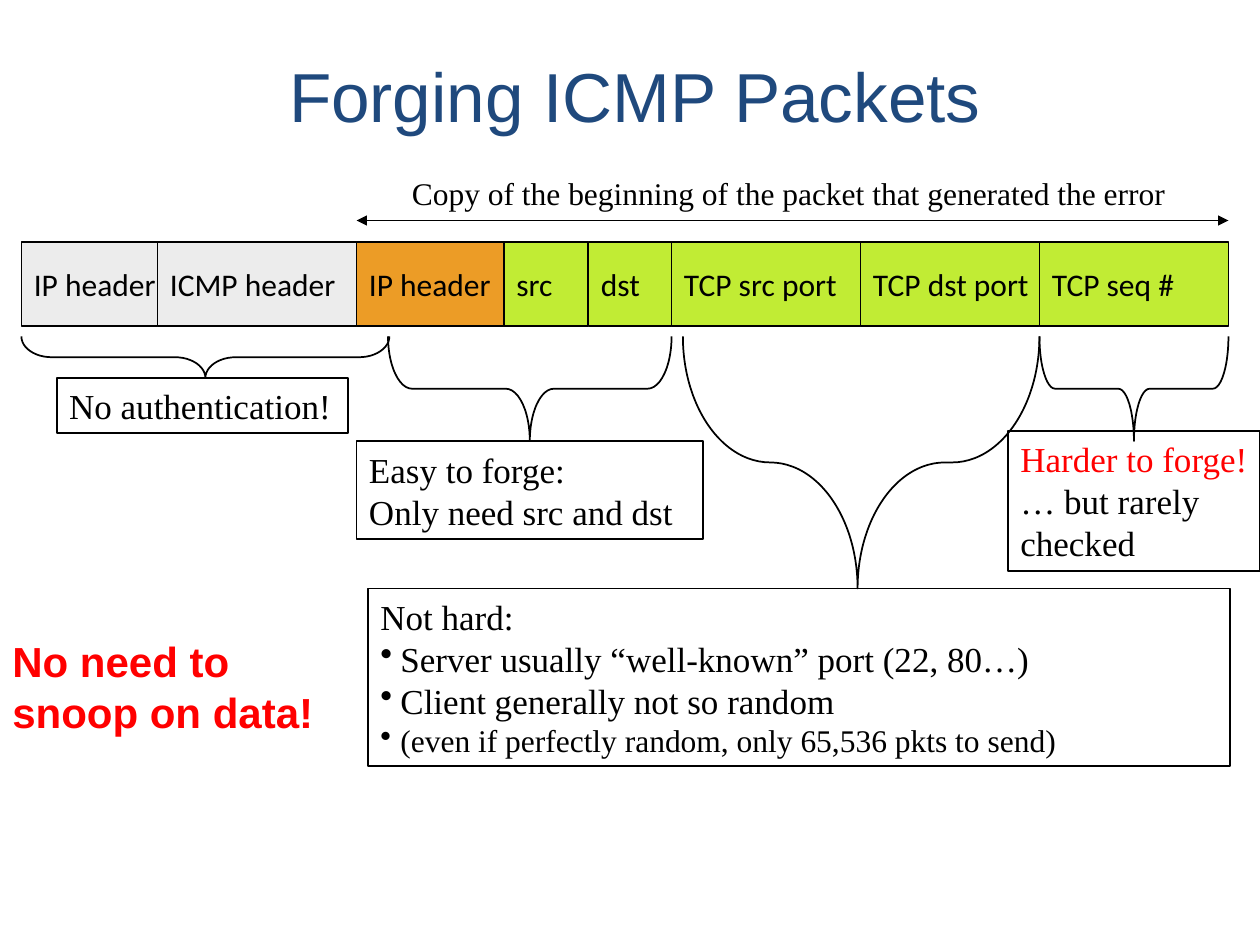
from lxml.etree import SubElement
from pptx import Presentation
from pptx.dml.color import RGBColor
from pptx.enum.shapes import MSO_CONNECTOR, MSO_SHAPE
from pptx.enum.text import MSO_ANCHOR, MSO_AUTO_SIZE, PP_ALIGN
from pptx.oxml.ns import qn
from pptx.util import Inches, Pt

COLORS = {
    "title": "1F497D", "black": "000000", "red": "FF0000",
    "outer": "ECECEC", "inner": "EC9C26", "forged": "C1EC34",
}
SERIF = "Times New Roman"


def write_text(shape, lines, font, wrap=True, grow=True, bold=False):
    frame = shape.text_frame
    frame.word_wrap = wrap
    frame.vertical_anchor = MSO_ANCHOR.MIDDLE
    frame.auto_size = MSO_AUTO_SIZE.SHAPE_TO_FIT_TEXT if grow else MSO_AUTO_SIZE.NONE
    for index, (text, size, color, bullet) in enumerate(lines):
        paragraph = frame.add_paragraph() if index else frame.paragraphs[0]
        paragraph.alignment = PP_ALIGN.LEFT
        run = paragraph.add_run()
        run.text = text
        run.font.name = font
        run.font.size = Pt(size)
        run.font.bold = bold
        run.font.color.rgb = RGBColor.from_string(COLORS[color])
        if bullet:
            properties = paragraph._p.get_or_add_pPr()
            properties.set("marL", str(Inches(0.16)))
            properties.set("indent", str(-Inches(0.16)))
            SubElement(properties, qn("a:buChar"), char="•")


def add_outlined(kind, left, top, width, height, fill=None):
    shape = slide.shapes.add_shape(kind, Inches(left), Inches(top), Inches(width), Inches(height))
    shape.shadow.inherit = False
    shape.line.color.rgb = RGBColor.from_string(COLORS["black"])
    shape.line.width = Pt(1)
    if fill:
        shape.fill.solid()
        shape.fill.fore_color.rgb = RGBColor.from_string(COLORS[fill])
    else:
        shape.fill.background()
    return shape


presentation = Presentation()
presentation.slide_width = Inches(10)
presentation.slide_height = Inches(7.5)
slide = presentation.slides.add_slide(presentation.slide_layouts[5])

title = slide.shapes.title
title.left, title.top = Inches(0.33), Inches(0.42)
title.width, title.height = Inches(9.42), Inches(0.67)
write_text(title, [("Forging ICMP Packets", 39.6, "title", False)], "Arial", grow=False)
title.text_frame.paragraphs[0].alignment = PP_ALIGN.CENTER

packet_fields = [
    ("IP header", 0.17, "outer"),
    ("ICMP header", 1.25, "outer"),
    ("IP header", 2.83, "inner"),
    ("src", 4, "forged"),
    ("dst", 4.67, "forged"),
    ("TCP src port", 5.33, "forged"),
    ("TCP dst port", 6.83, "forged"),
    ("TCP seq #", 8.25, "forged"),
]
right_edges = [left for _, left, _ in packet_fields[1:]] + [9.75]
for (label, left, fill), right in zip(packet_fields, right_edges):
    field = add_outlined(MSO_SHAPE.RECTANGLE, left, 1.92, right - left, 0.67, fill)
    write_text(field, [(label, 18, "black", False)], "Calibri", wrap=False, grow=False)

brace_top = 2.67
braces = [
    (0.17, 2.92, 0.33, 0.73, 0.5),
    (3.08, 2.25, 0.83, 0.23, 0.5),
    (5.42, 2.83, 2, 0.35, 0.49),
    (8.25, 1.5, 0.83, 0.15, 0.5),
]
for left, span, depth, curve, tip in braces:
    offset = (span - depth) / 2
    brace = add_outlined(MSO_SHAPE.LEFT_BRACE, left + offset, brace_top - offset, depth, span)
    brace.rotation = 270
    brace.adjustments[0] = curve
    brace.adjustments[1] = tip

notes = [
    (0.45, 3, 2.31, 0.44, False, [("No authentication!", 20, "black", False)]),
    (2.83, 3.5, 2.75, 0.78, True, [
        ("Easy to forge:", 20, "black", False),
        ("Only need src and dst", 20, "black", False),
    ]),
    (2.92, 4.67, 6.84, 1.41, True, [
        ("Not hard:", 20, "black", False),
        ("Server usually “well-known” port (22, 80…)", 20, "black", True),
        ("Client generally not so random", 20, "black", True),
        ("(even if perfectly random, only 65,536 pkts to send)", 18, "black", True),
    ]),
    (8, 3.42, 2, 1.11, True, [
        ("Harder to forge!", 20, "red", False),
        ("… but rarely checked", 20, "black", False),
    ]),
]
for left, top, width, height, wrap, lines in notes:
    note = add_outlined(MSO_SHAPE.RECTANGLE, left, top, width, height)
    write_text(note, lines, SERIF, wrap=wrap)

conclusion = slide.shapes.add_textbox(Inches(0), Inches(4.99), Inches(2.83), Inches(0.91))
write_text(conclusion, [("No need to snoop on data!", 24, "red", False)], "Arial", bold=True)

copied_range = slide.shapes.add_connector(
    MSO_CONNECTOR.STRAIGHT, Inches(2.83), Inches(1.75), Inches(9.75), Inches(1.75))
copied_range.line.color.rgb = RGBColor.from_string(COLORS["black"])
copied_range.line.width = Pt(1)
line_properties = copied_range.line._get_or_add_ln()
for arrowhead in ("a:headEnd", "a:tailEnd"):
    SubElement(line_properties, qn(arrowhead), type="triangle")
SubElement(copied_range._element.spPr, qn("a:effectLst"))

caption = slide.shapes.add_textbox(Inches(3.17), Inches(1.33), Inches(6.19), Inches(0.4))
write_text(caption, [
    ("Copy of the beginning of the packet that generated the error", 18, "black", False),
], SERIF, wrap=False)

presentation.save("out.pptx")
